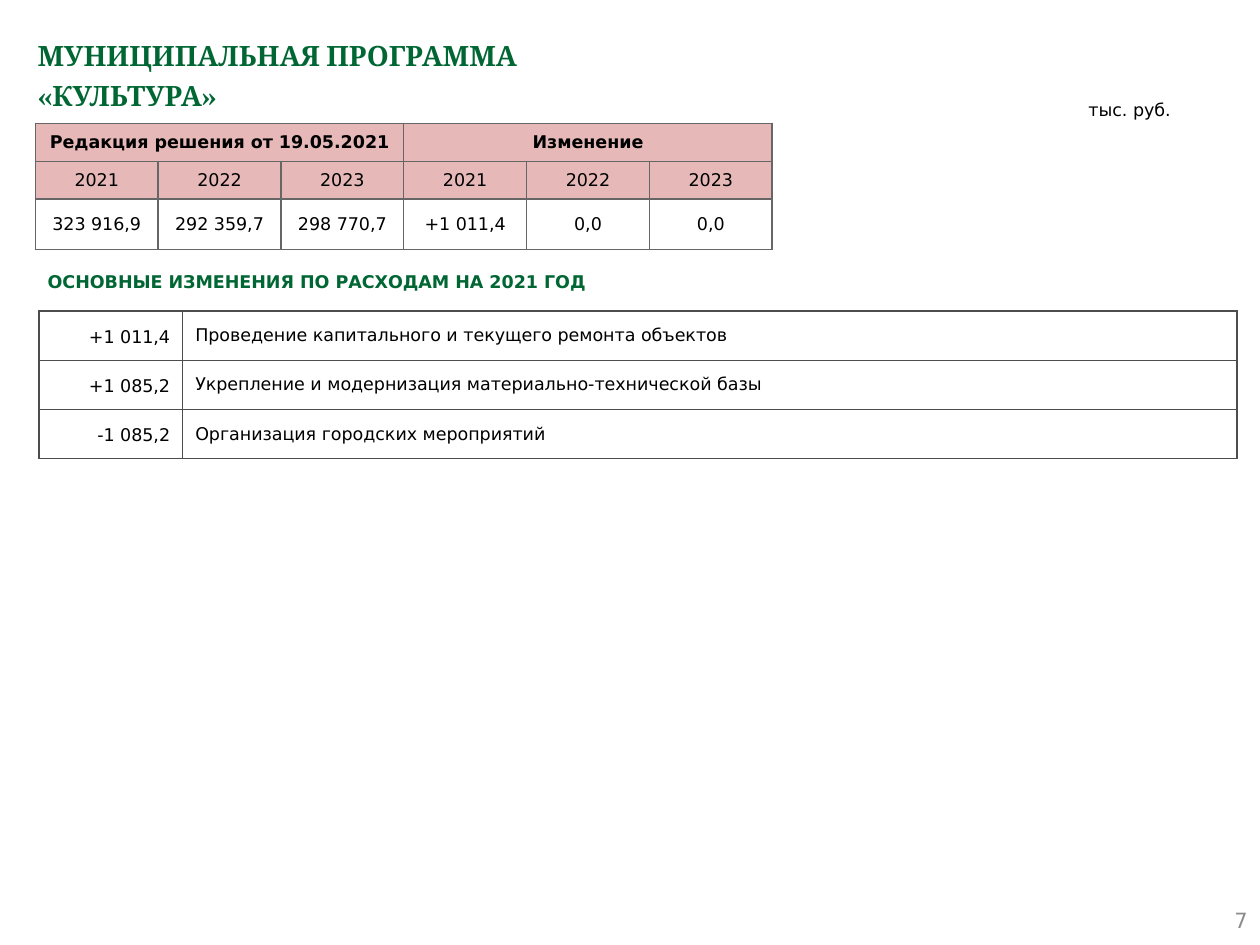
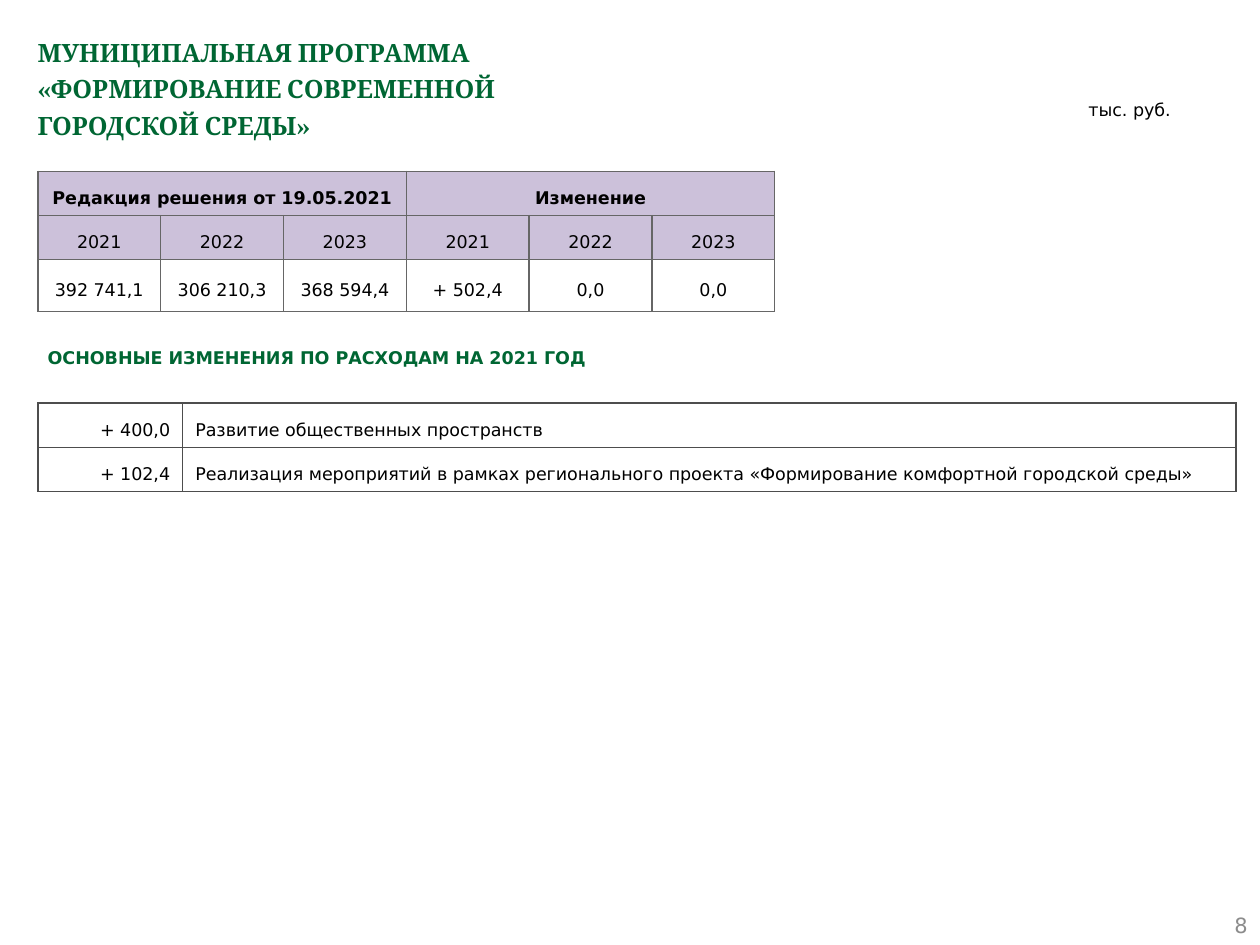
import pptx
import pptx.dml.color
import pptx.enum.shapes
import pptx.enum.text
import pptx.oxml
import pptx.oxml.ns
import pptx.util

COLORS = {"title": "006633", "text": "000000", "number": "8C8C8C",
          "budget_line": "666666", "change_line": "4D4D4D"}
SERIF, SANS = "Cambria", "DejaVu Sans"
WIDTH, HEIGHT = 10, 7.5
UNIT = "тыс. руб."
SUBTITLE = "ОСНОВНЫЕ ИЗМЕНЕНИЯ ПО РАСХОДАМ НА 2021 ГОД"
GROUPS = ["Редакция решения от 19.05.2021", "Изменение"]
YEARS = ["2021", "2022", "2023"]

PROGRAMS = [
    {
        "number": "7", "number_top": 7.1,
        "title": ["МУНИЦИПАЛЬНАЯ ПРОГРАММА", "«КУЛЬТУРА»"], "title_size": 16,
        "header": "E6B9B8",
        "budget": ["323 916,9", "292 359,7", "298 770,7", "+1 011,4", "0,0", "0,0"],
        "budget_at": (0.28, 0.98), "budget_rows": [0.3, 0.3, 0.4], "budget_spacing": 1.0,
        "subtitle_at": (0.28, 2.02, 4.92, 0.43),
        "changes": [
            ("+1 011,4", "Проведение капитального и текущего ремонта объектов"),
            ("+1 085,2", "Укрепление и модернизация материально-технической базы"),
            ("-1 085,2", "Организация городских мероприятий"),
        ],
        "changes_at": (0.31, 2.47), "change_columns": [1.14, 8.37],
        "change_row": 0.39, "change_spacing": (1.15, 1.0),
    },
    {
        "number": "8", "number_top": 7.14,
        "title": ["МУНИЦИПАЛЬНАЯ ПРОГРАММА", "«ФОРМИРОВАНИЕ СОВРЕМЕННОЙ", "ГОРОДСКОЙ СРЕДЫ»"],
        "title_size": 14.4,
        "header": "CCC1DA",
        "budget": ["392 741,1", "306 210,3", "368 594,4", "+ 502,4", "0,0", "0,0"],
        "budget_at": (0.3, 1.36), "budget_rows": [0.35, 0.35, 0.41], "budget_spacing": 1.5,
        "subtitle_at": (0.28, 2.62, 5.32, 0.43),
        "changes": [
            ("+ 400,0", "Развитие общественных пространств"),
            ("+ 102,4", "Реализация мероприятий в рамках регионального проекта "
                        "«Формирование комфортной городской среды»"),
        ],
        "changes_at": (0.3, 3.2), "change_columns": [1.15, 8.36],
        "change_row": 0.34, "change_spacing": (1.5, 1.5),
    },
]

ALIGN = pptx.enum.text.PP_ALIGN
MIDDLE = pptx.enum.text.MSO_ANCHOR.MIDDLE
inches = pptx.util.Inches


def rgb(value):
    return pptx.dml.color.RGBColor.from_string(value)


def write(frame, lines, size=10, font=SANS, color="text", bold=False,
          align=ALIGN.LEFT, spacing=1.0):
    para = frame.paragraphs[0]
    para.alignment = align
    para.line_spacing = spacing
    for index, line in enumerate(lines):
        if index:
            para.add_line_break()
        span = para.add_run()
        span.text = line
        span.font.size = pptx.util.Pt(size)
        span.font.name = font
        span.font.bold = bold
        span.font.color.rgb = rgb(COLORS[color])


def add_text(page, at, lines, anchor=pptx.enum.text.MSO_ANCHOR.TOP, **style):
    box = page.shapes.add_textbox(*map(inches, at))
    box.text_frame.word_wrap = True
    box.text_frame.vertical_anchor = anchor
    write(box.text_frame, lines, **style)
    return box


def add_subtitle(page, at):
    box = page.shapes.add_shape(
        pptx.enum.shapes.MSO_SHAPE.PENTAGON, *map(inches, at))
    box.adjustments[0] = 0
    box.shadow.inherit = False
    box.fill.background()
    box.line.fill.background()
    box.text_frame.vertical_anchor = MIDDLE
    write(box.text_frame, [SUBTITLE], color="title", bold=True)


def set_borders(cell, color):
    properties = cell._tc.get_or_add_tcPr()
    for index, side in enumerate(("lnL", "lnR", "lnT", "lnB")):
        properties.insert(index, pptx.oxml.parse_xml(
            f'<a:{side} {pptx.oxml.ns.nsdecls("a")} w="12700"><a:solidFill>'
            f'<a:srgbClr val="{color}"/></a:solidFill></a:{side}>'))


def add_grid(page, at, columns, rows, line):
    table = page.shapes.add_table(
        len(rows), len(columns), *map(inches, (*at, sum(columns), sum(rows)))).table
    table.first_row = table.horz_banding = False
    for column, width in zip(table.columns, columns):
        column.width = inches(width)
    for row, height in zip(table.rows, rows):
        row.height = inches(height)
    for cell in table.iter_cells():
        cell.vertical_anchor = MIDDLE
        cell.fill.background()
        set_borders(cell, COLORS[line])
    return table


def add_budget(page, program):
    table = add_grid(page, program["budget_at"], [5.85 / 6] * 6,
                     program["budget_rows"], "budget_line")
    for cell in table.iter_cells():
        cell.margin_left = cell.margin_right = inches(0.05)
        cell.margin_top = cell.margin_bottom = inches(0.05)
    for row in range(2):
        for column in range(6):
            fill = table.cell(row, column).fill
            fill.solid()
            fill.fore_color.rgb = rgb(program["header"])
    style = {"align": ALIGN.CENTER, "spacing": program["budget_spacing"]}
    for index, group in enumerate(GROUPS):
        first = index * len(YEARS)
        table.cell(0, first).merge(table.cell(0, first + len(YEARS) - 1))
        write(table.cell(0, first).text_frame, [group], bold=True, **style)
    for row, values in enumerate([YEARS * 2, program["budget"]], start=1):
        for column, value in enumerate(values):
            write(table.cell(row, column).text_frame, [value], **style)


def add_changes(page, program):
    table = add_grid(page, program["changes_at"], program["change_columns"],
                     [program["change_row"]] * len(program["changes"]), "change_line")
    aligns = (ALIGN.RIGHT, ALIGN.LEFT)
    for row, change in enumerate(program["changes"]):
        for column, value in enumerate(change):
            write(table.cell(row, column).text_frame, [value],
                  align=aligns[column], spacing=program["change_spacing"][column])


def add_program(deck, program):
    page = deck.slides.add_slide(deck.slide_layouts[6])
    add_text(page, (0.2, 0.2, 9.61, 0.79), program["title"], font=SERIF,
             size=program["title_size"], color="title", bold=True, spacing=1.2)
    add_text(page, (WIDTH - 2.33, program["number_top"], 2.33, 0.4),
             [program["number"]], anchor=MIDDLE, size=12, color="number",
             align=ALIGN.RIGHT)
    add_subtitle(page, program["subtitle_at"])
    add_changes(page, program)
    unit = add_text(page, (8.54, 0.7, 1.01, 0.3), [UNIT], spacing=1.2)
    unit.text_frame.auto_size = pptx.enum.text.MSO_AUTO_SIZE.SHAPE_TO_FIT_TEXT
    add_budget(page, program)


def main():
    deck = pptx.Presentation()
    deck.slide_width, deck.slide_height = inches(WIDTH), inches(HEIGHT)
    for program in PROGRAMS:
        add_program(deck, program)
    deck.save("out.pptx")


if __name__ == "__main__":
    main()
